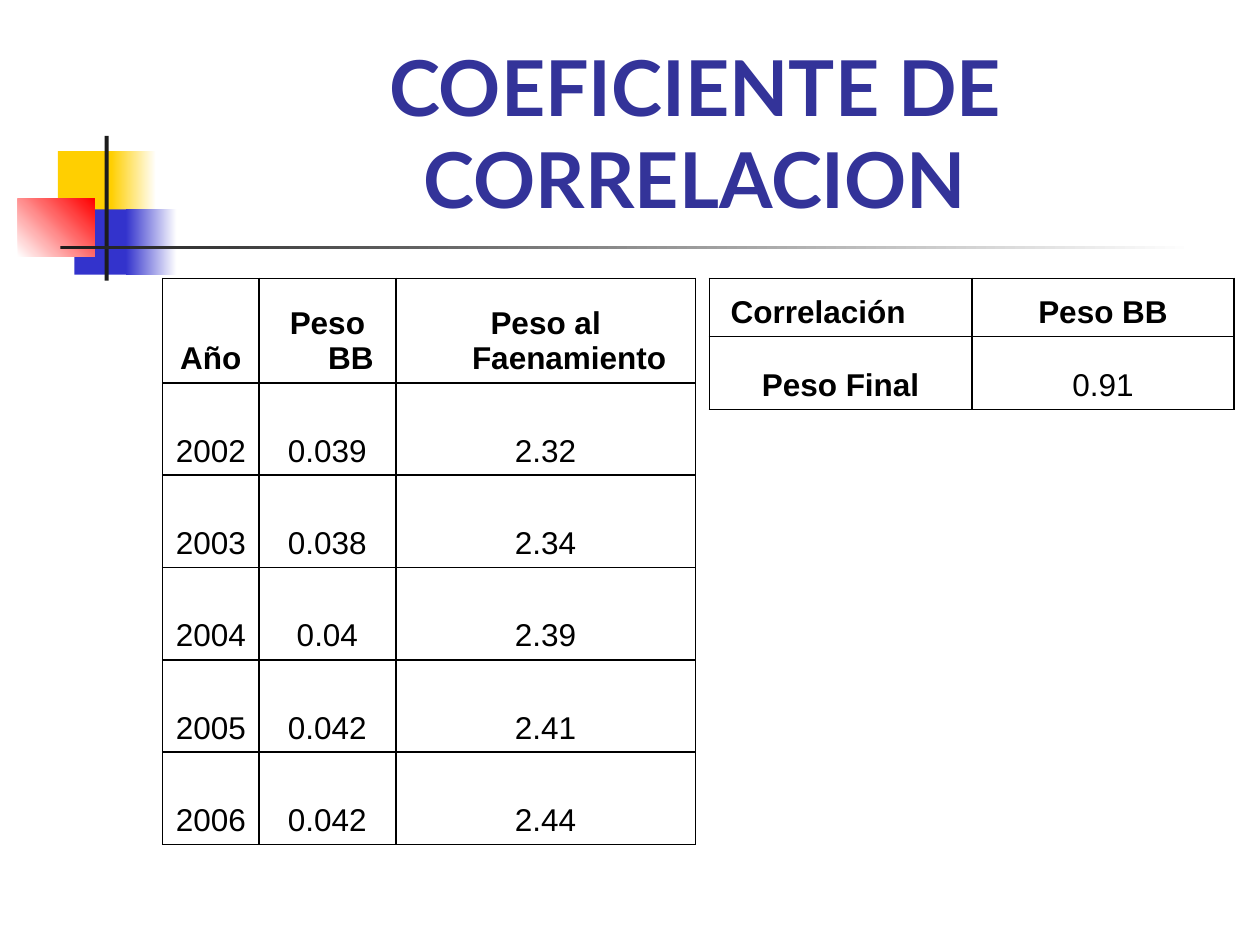
from dataclasses import dataclass

from lxml import etree
from pptx import Presentation
from pptx import util as u
from pptx.dml.color import RGBColor
from pptx.enum import shapes, text
from pptx.oxml import ns


@dataclass(frozen=True)
class Theme:
    gold: str = "FFCF01"
    blue: str = "3333CC"
    red: str = "FF0000"
    dark: str = "1C1C1C"
    white: str = "FFFFFF"
    black: str = "000000"
    navy: str = "333399"
    head: str = "Lato"
    body: str = "Arial"
    big: int = 44
    small: int = 18


class Deck:
    def __init__(self, theme, slide):
        self.theme = theme
        self.slide = slide

    def label(self, frame, words, font, size, color, bold, align="CENTER"):
        para = frame.paragraphs[0]
        para.alignment = getattr(text.PP_ALIGN, align)
        run = para.add_run()
        run.text = words
        for key, value in dict(name=font, size=u.Pt(size), bold=bold).items():
            setattr(run.font, key, value)
        run.font.color.rgb = RGBColor.from_string(color)
        return para

    def block(self, box, *colors, angle=0):
        """Rectangle with one plain colour, or a gradient between two."""
        item = self.slide.shapes.add_shape(
            shapes.MSO_SHAPE.RECTANGLE, *map(u.Cm, box))
        item.shadow.inherit = False
        item.line.fill.background()
        if len(colors) == 1:
            item.fill.solid()
            item.fill.fore_color.rgb = RGBColor.from_string(colors[0])
            return
        item.fill.gradient()
        item.fill.gradient_angle = angle
        for stop, color in zip(item.fill.gradient_stops, colors):
            stop.color.rgb = RGBColor.from_string(color)

    def title(self, box, words):
        t = self.theme
        frame = self.slide.shapes.add_textbox(*map(u.Cm, box)).text_frame
        look = dict(word_wrap=True, vertical_anchor=text.MSO_ANCHOR.BOTTOM)
        for key, value in look.items():
            setattr(frame, key, value)
        self.label(frame, words, t.head, t.big, t.navy, True)

    def edge(self, cell):
        props = cell._tc.get_or_add_tcPr()
        for side in ("lnL", "lnR", "lnT", "lnB"):
            line = etree.SubElement(props, ns.qn("a:" + side), w=str(u.Pt(1)))
            fill = etree.SubElement(line, ns.qn("a:solidFill"))
            etree.SubElement(fill, ns.qn("a:srgbClr"), val=self.theme.black)

    def table(self, left, top, cols, rows, data, bold, hang=0, lefts=()):
        """Ruled table; bold and lefts hold the (row, column) of special cells."""
        t = self.theme
        size = map(u.Cm, (left, top, sum(cols), sum(rows)))
        grid = self.slide.shapes.add_table(len(rows), len(cols), *size).table
        grid.first_row = grid.horz_banding = False
        for col, width in zip(grid.columns, cols):
            col.width = u.Cm(width)
        for row, height in zip(grid.rows, rows):
            row.height = u.Cm(height)
        for r, line in enumerate(data):
            for c, words in enumerate(line):
                cell = grid.cell(r, c)
                cell.vertical_anchor = text.MSO_ANCHOR.BOTTOM
                self.edge(cell)
                cell.fill.background()
                align = "LEFT" if (r, c) in lefts else "CENTER"
                para = self.label(cell.text_frame, words, t.body, t.small,
                                  t.black, (r, c) in bold, align)
                if hang:
                    props = para._p.get_or_add_pPr()
                    props.set("marL", str(u.Cm(hang)))
                    props.set("indent", str(-u.Cm(hang)))


def main():
    show = Presentation()
    show.slide_width, show.slide_height = u.Cm(25.4), u.Cm(19.05)
    t = Theme()
    deck = Deck(t, show.slides.add_slide(show.slide_layouts[6]))

    deck.block((1.17, 3.05, 1.22, 1.32), t.gold)
    deck.block((2.24, 3.05, 0.91, 1.32), t.gold, t.white)
    deck.block((1.5, 4.22, 1.17, 1.32), t.blue)
    deck.block((2.54, 4.22, 1.02, 1.32), t.blue, t.white)
    deck.block((0.36, 4.01, 1.55, 1.17), t.white, t.red, angle=45)
    deck.block((2.11, 2.74, 0.08, 2.92), t.dark)
    deck.block((1.22, 4.95, 22.86, 0.08), t.dark, t.white)

    deck.title((3.2, 0.58, 21.64, 4.06), "COEFICIENTE DE CORRELACION")

    years = [
        ("Año", "Peso BB", "Peso al Faenamiento"),
        ("2002", "0.039", "2.32"),
        ("2003", "0.038", "2.34"),
        ("2004", "0.04", "2.39"),
        ("2005", "0.042", "2.41"),
        ("2006", "0.042", "2.44"),
    ]
    deck.table(3.28, 5.61, (1.94, 2.76, 6.04), [2.11] + [1.86] * 5, years,
               bold={(0, 0), (0, 1), (0, 2)}, hang=0.95)

    result = [(" Correlación", "Peso BB"), ("Peso Final", "0.91")]
    deck.table(14.3, 5.61, (5.29, 5.29), (1.17, 1.47), result,
               bold={(0, 0), (0, 1), (1, 0)}, lefts={(0, 0)})

    show.save("out.pptx")


if __name__ == "__main__":
    main()
